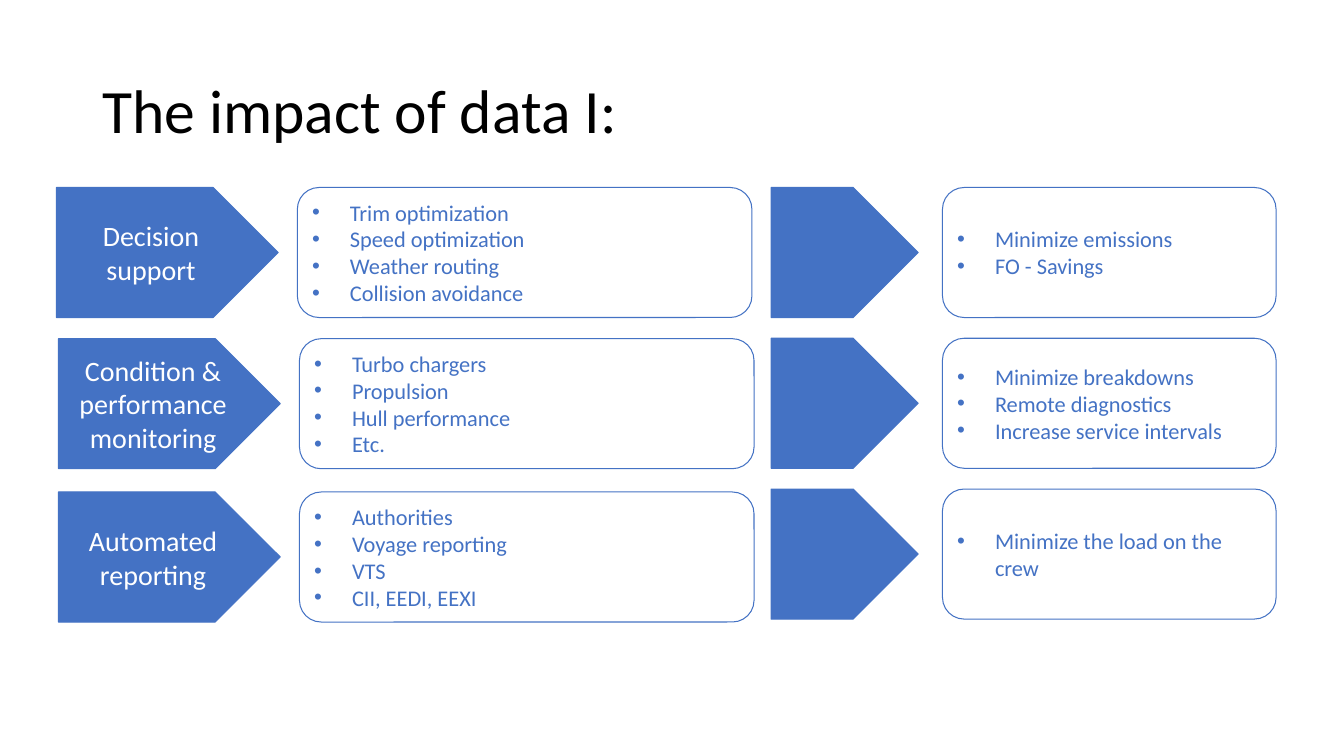
from lxml import etree
from pptx import Presentation
from pptx import util as u
from pptx.dml.color import RGBColor
from pptx.enum import shapes, text
from pptx.oxml import ns

BLUE = RGBColor(0x44, 0x72, 0xC4)
WHITE = RGBColor(0xFF, 0xFF, 0xFF)
BLACK = RGBColor(0x00, 0x00, 0x00)

ARROW = shapes.MSO_SHAPE.PENTAGON
CARD = shapes.MSO_SHAPE.ROUNDED_RECTANGLE

ROW_HEIGHT = 92.9
THEME_WIDTH, TOPICS_WIDTH = 158.4, 324.7
TOPICS_OFFSET = 172.1  # from the left edge of the theme arrow
LINK_LEFT, LINK_WIDTH = 550.8, 105.1
BENEFITS_LEFT, BENEFITS_WIDTH = 673.2, 238.3
BENEFITS_TOP, BENEFITS_PITCH = 133.9, 107.7

# theme left, theme top, theme lines, topics, benefits
ROWS = [
    (40.3, 133.9, ["Decision", "support"],
     ["Trim optimization", "Speed optimization", "Weather routing", "Collision avoidance"],
     ["Minimize emissions", "FO - Savings"]),
    (41.8, 241.9, ["Condition & performance monitoring"],
     ["Turbo chargers", "Propulsion", "Hull performance", "Etc."],
     ["Minimize breakdowns", "Remote diagnostics", "Increase service intervals"]),
    (41.8, 351.4, ["Automated", "reporting"],
     ["Authorities", "Voyage reporting", "VTS", "CII, EEDI, EEXI"],
     ["Minimize the load on the crew"]),
]


class ImpactSlide:
    font = "Calibri"
    inset = 6
    indent = 27

    def __init__(self, slide):
        self.slide = slide

    def set_lines(self, frame, lines, size, color, align):
        frame.word_wrap = True
        frame.vertical_anchor = text.MSO_ANCHOR.MIDDLE
        for index, line in enumerate(lines):
            paragraph = frame.add_paragraph() if index else frame.paragraphs[0]
            paragraph.text = line
            paragraph.alignment = align
            paragraph.font.name = self.font
            paragraph.font.size = u.Pt(size)
            paragraph.font.color.rgb = color

    def title(self, left, top, width, height, wording):
        heading = self.slide.shapes.add_textbox(*map(u.Pt, (left, top, width, height)))
        self.set_lines(heading.text_frame, [wording], 44, BLACK, text.PP_ALIGN.LEFT)
        heading.text_frame.paragraphs[0].line_spacing = 0.9

    def block(self, preset, left, top, width, fill):
        """Add an outlined row-high shape and return its text frame."""
        block = self.slide.shapes.add_shape(
            preset, *map(u.Pt, (left, top, width, ROW_HEIGHT)))
        block.shadow.inherit = False
        block.fill.solid()
        block.fill.fore_color.rgb = fill
        block.line.color.rgb = BLUE
        block.line.width = u.Pt(0.75)
        frame = block.text_frame
        frame.margin_left = frame.margin_right = u.Pt(self.inset)
        frame.margin_top = frame.margin_bottom = u.Pt(self.inset)
        return frame

    def arrow(self, left, top, width, lines=()):
        frame = self.block(ARROW, left, top, width, BLUE)
        self.set_lines(frame, lines, 20, WHITE, text.PP_ALIGN.CENTER)

    def bullet_card(self, left, top, width, items):
        frame = self.block(CARD, left, top, width, WHITE)
        self.set_lines(frame, items, 16, BLUE, text.PP_ALIGN.LEFT)
        for paragraph in frame.paragraphs:
            properties = paragraph._p.get_or_add_pPr()
            properties.set("marL", str(u.Pt(self.indent)))
            properties.set("indent", str(-u.Pt(self.indent)))
            etree.SubElement(properties, ns.qn("a:buFont")).set("typeface", "Arial")
            etree.SubElement(properties, ns.qn("a:buChar")).set("char", "•")
            # Bullets must precede the default run properties
            properties.append(properties.find(ns.qn("a:defRPr")))


def main():
    deck = Presentation()
    deck.slide_width, deck.slide_height = u.Pt(960), u.Pt(540)
    impact = ImpactSlide(deck.slides.add_slide(deck.slide_layouts[6]))

    impact.title(66, 28.8, 828, 104.4, "The impact of data I:")
    for left, top, theme, topics, _ in ROWS:
        impact.arrow(left, top, THEME_WIDTH, theme)
        impact.bullet_card(left + TOPICS_OFFSET, top, TOPICS_WIDTH, topics)
    for row, (*_, benefits) in enumerate(ROWS):
        top = BENEFITS_TOP + row * BENEFITS_PITCH
        impact.arrow(LINK_LEFT, top, LINK_WIDTH)
        impact.bullet_card(BENEFITS_LEFT, top, BENEFITS_WIDTH, benefits)

    deck.save("out.pptx")


if __name__ == "__main__":
    main()
